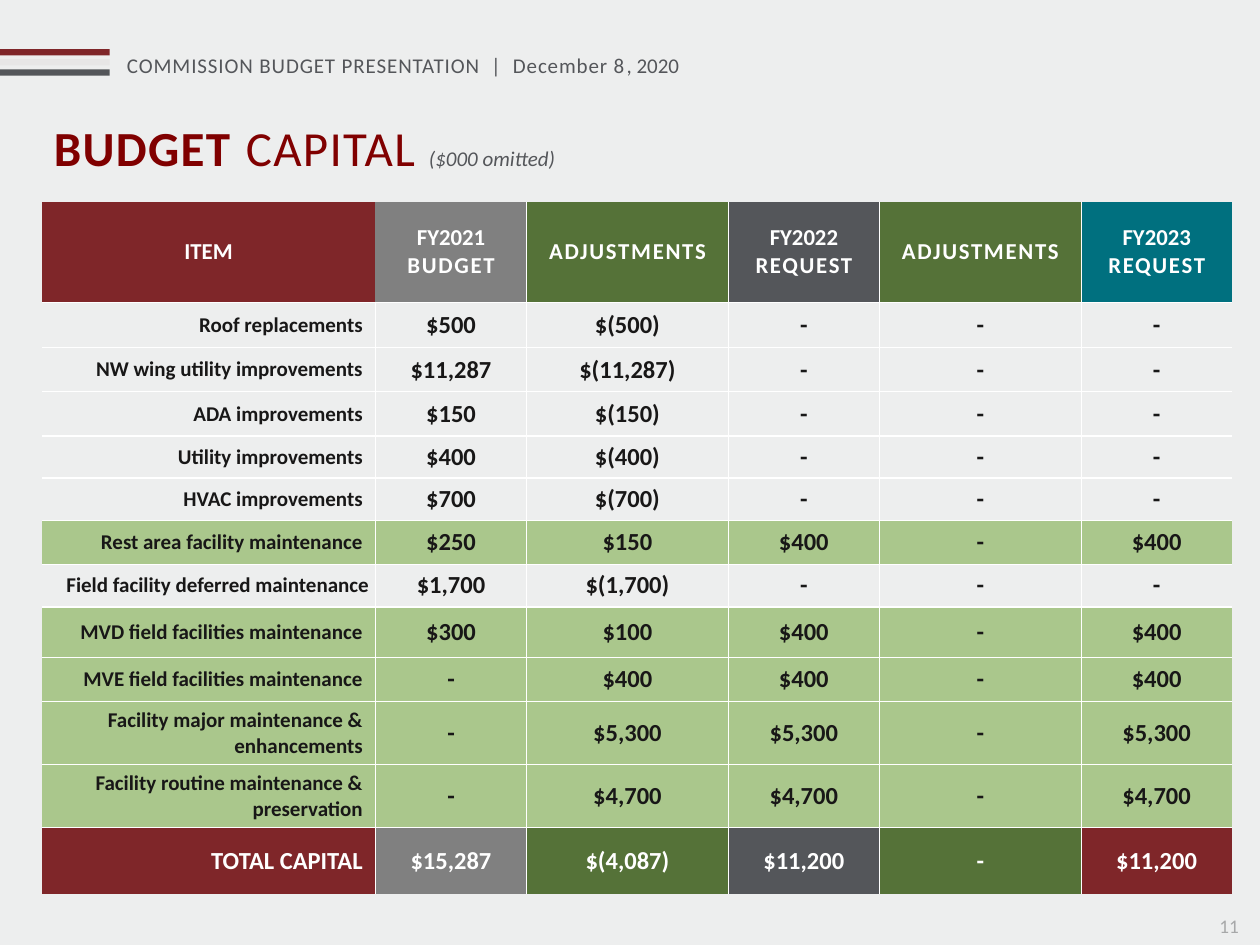
import dataclasses

import lxml.etree
import pptx
import pptx.dml.color
import pptx.enum.shapes
import pptx.enum.text
import pptx.oxml.ns
import pptx.util

COLUMNS, ROWS = 100, 75
UNIT = pptx.util.Inches(0.1)
PLAIN_STYLE = "{2D5ABB26-0587-4C30-8999-92F81FD0307C}"
ALIGN = pptx.enum.text.PP_ALIGN


@dataclasses.dataclass(frozen=True)
class Theme:
    """Colours, font and type sizes of the slide."""
    font: str = "Calibri"
    page: str = "EDEEEE"
    red: str = "7F2629"
    title_red: str = "800000"
    pale: str = "E7E6E6"
    slate: str = "54565A"
    grey: str = "808080"
    number_grey: str = "A7A8A9"
    green: str = "557238"
    light_green: str = "AAC78C"
    teal: str = "00707F"
    ink: str = "181717"
    white: str = "FFFFFF"
    title: int = 28
    title_gap: int = 32
    amount: int = 14
    heading: int = 13
    label: int = 12
    number: int = 11
    rule: float = 0.75


T = Theme()
COLUMN_WIDTHS = [26.5, 12, 16, 12, 16, 12]
ROW_HEIGHTS = [8, 3.6, 3.5, 3.5, 3.2, 3.2, 3.5, 3.4, 4, 3.5, 3.5, 3.5, 5.3]
COLUMN_FILLS = [T.red, T.grey, T.green, T.slate, T.green, T.teal]
TOTAL_FILLS = COLUMN_FILLS[:-1] + [T.red]
HEADINGS = ["ITEM", "FY2021\nBUDGET", "ADJUSTMENTS", "FY2022\nREQUEST",
            "ADJUSTMENTS", "FY2023\nREQUEST"]
SPACED = {"BUDGET", "ADJUSTMENTS", "REQUEST"}
TIGHT_LABEL = "Field facility deferred maintenance"
ITEMS = [
    ("Roof replacements", "$500", "$(500)", "-", "-", "-"),
    ("NW wing utility improvements", "$11,287", "$(11,287)", "-", "-", "-"),
    ("ADA improvements", "$150", "$(150)", "-", "-", "-"),
    ("Utility improvements", "$400", "$(400)", "-", "-", "-"),
    ("HVAC improvements", "$700", "$(700)", "-", "-", "-"),
    ("Rest area facility maintenance", "$250", "$150", "$400", "-", "$400"),
    (TIGHT_LABEL, "$1,700", "$(1,700)", "-", "-", "-"),
    ("MVD field facilities maintenance", "$300", "$100", "$400", "-", "$400"),
    ("MVE field facilities maintenance", "-", "$400", "$400", "-", "$400"),
    ("Facility major maintenance & enhancements", "-", "$5,300", "$5,300", "-", "$5,300"),
    ("Facility routine maintenance & preservation", "-", "$4,700", "$4,700", "-", "$4,700"),
]
TOTALS = ("TOTAL CAPITAL", "$15,287", "$(4,087)", "$11,200", "-", "$11,200")


def grid(*cells):
    """Turn counts of grid units into lengths."""
    return [round(n * UNIT) for n in cells]


def rgb(code):
    """Return the colour for a hex code."""
    return pptx.dml.color.RGBColor.from_string(code)


def style_run(r, size, color, bold=False, italic=False, spacing=0):
    """Set font, size, colour, weight and letter spacing of a run."""
    r.font.name, r.font.size = T.font, pptx.util.Pt(size)
    r.font.bold, r.font.italic = bold, italic
    r.font.color.rgb = rgb(color)
    if spacing:
        r.font._element.set("spc", str(round(spacing * 100)))


def add_text(s, box, runs):
    """Add a one-line text box from (text, style) pairs."""
    tf = s.shapes.add_textbox(*grid(*box)).text_frame
    tf.word_wrap = True
    for text, style in runs:
        r = tf.paragraphs[0].add_run()
        r.text = text
        style_run(r, **style)


def add_bar(s, box, color):
    """Add a plain filled rectangle."""
    sp = s.shapes.add_shape(pptx.enum.shapes.MSO_SHAPE.RECTANGLE, *grid(*box))
    sp.shadow.inherit = False
    sp.fill.solid()
    sp.fill.fore_color.rgb = rgb(color)
    sp.line.fill.background()


def add_borders(cell, sides):
    """Draw thin white rules on the given sides of a cell."""
    qn = pptx.oxml.ns.qn
    tc_pr = cell._tc.get_or_add_tcPr()
    for side in sides:
        ln = lxml.etree.SubElement(tc_pr, qn(f"a:ln{side}"), w=str(pptx.util.Pt(T.rule)))
        fill = lxml.etree.SubElement(ln, qn("a:solidFill"))
        lxml.etree.SubElement(fill, qn("a:srgbClr"), val=T.white)


def fill_cell(cell, text, size, color, align, fill=None):
    """Write bold text in a cell and set its background."""
    cell.vertical_anchor = pptx.enum.text.MSO_ANCHOR.MIDDLE
    if fill:
        cell.fill.solid()
        cell.fill.fore_color.rgb = rgb(fill)
    else:
        cell.fill.background()
    cell.text_frame.text = text
    for p in cell.text_frame.paragraphs:
        p.alignment = align
        for r in p.runs:
            style_run(r, size, color, bold=True, spacing=int(r.text in SPACED))


def inner_sides(row, col):
    """List the sides of a cell that face another cell."""
    facing = {"L": col > 0, "R": col < len(COLUMN_WIDTHS) - 1,
              "T": row > 0, "B": row < len(ROW_HEIGHTS) - 1}
    if row == 0:
        facing["L"], facing["R"] = col > 1, facing["R"] and col > 0
    return [side for side, shown in facing.items() if shown]


def add_budget_table(s):
    """Add the capital budget table."""
    rows = [HEADINGS, *ITEMS, TOTALS]
    frame = s.shapes.add_table(len(rows), len(HEADINGS),
                               *grid(3.3, 16, sum(COLUMN_WIDTHS), sum(ROW_HEIGHTS)))
    table = frame.table
    table.first_row = table.horz_banding = False
    table._tbl.tblPr.find(pptx.oxml.ns.qn("a:tableStyleId")).text = PLAIN_STYLE
    for column, width in zip(table.columns, grid(*COLUMN_WIDTHS)):
        column.width = width
    for row, height in zip(table.rows, grid(*ROW_HEIGHTS)):
        row.height = height
    for i, values in enumerate(rows):
        for j, text in enumerate(values):
            cell = table.cell(i, j)
            add_borders(cell, inner_sides(i, j))
            align = ALIGN.RIGHT if i and j == 0 else ALIGN.CENTER
            if i == 0:
                fill_cell(cell, text, T.heading, T.white, align, COLUMN_FILLS[j])
            elif values is TOTALS:
                fill_cell(cell, text, T.amount, T.white, align, TOTAL_FILLS[j])
            else:
                fill = T.light_green if values[-1] != "-" else None
                fill_cell(cell, text, T.amount if j else T.label, T.ink, align, fill)
            if i == 0 or text == TIGHT_LABEL:
                cell.margin_left = cell.margin_right = UNIT // 2


def main():
    """Build and save the slide."""
    prs = pptx.Presentation()
    prs.slide_width, prs.slide_height = grid(COLUMNS, ROWS)
    s = prs.slides.add_slide(prs.slide_layouts[6])
    s.background.fill.solid()
    s.background.fill.fore_color.rgb = rgb(T.page)

    small = dict(size=T.label, color=T.slate)
    heading = dict(color=T.title_red, spacing=0.8)
    add_text(s, (9.1, 3.7, 48.4, 5), [
        ("COMMISSION BUDGET PRESENTATION  |  December 8", dict(small, spacing=0.5)),
        (", 2020", small)])
    for i, color in enumerate([T.red, T.pale, T.slate]):
        add_bar(s, (0, 3.9 + 0.8 * i, 8.7, 0.5), color)
    add_text(s, (3.3, 8.3, 90.8, 6.4), [
        ("BUDGET", dict(heading, size=T.title, bold=True)),
        (" ", dict(heading, size=T.title_gap, bold=True)),
        ("CAPITAL ", dict(heading, size=T.title)),
        ("($000 omitted)", dict(small, italic=True))])
    add_text(s, (95.8, 72.1, 4.2, 2.9), [("11", dict(size=T.number, color=T.number_grey))])
    add_budget_table(s)
    prs.save("out.pptx")


if __name__ == "__main__":
    main()
